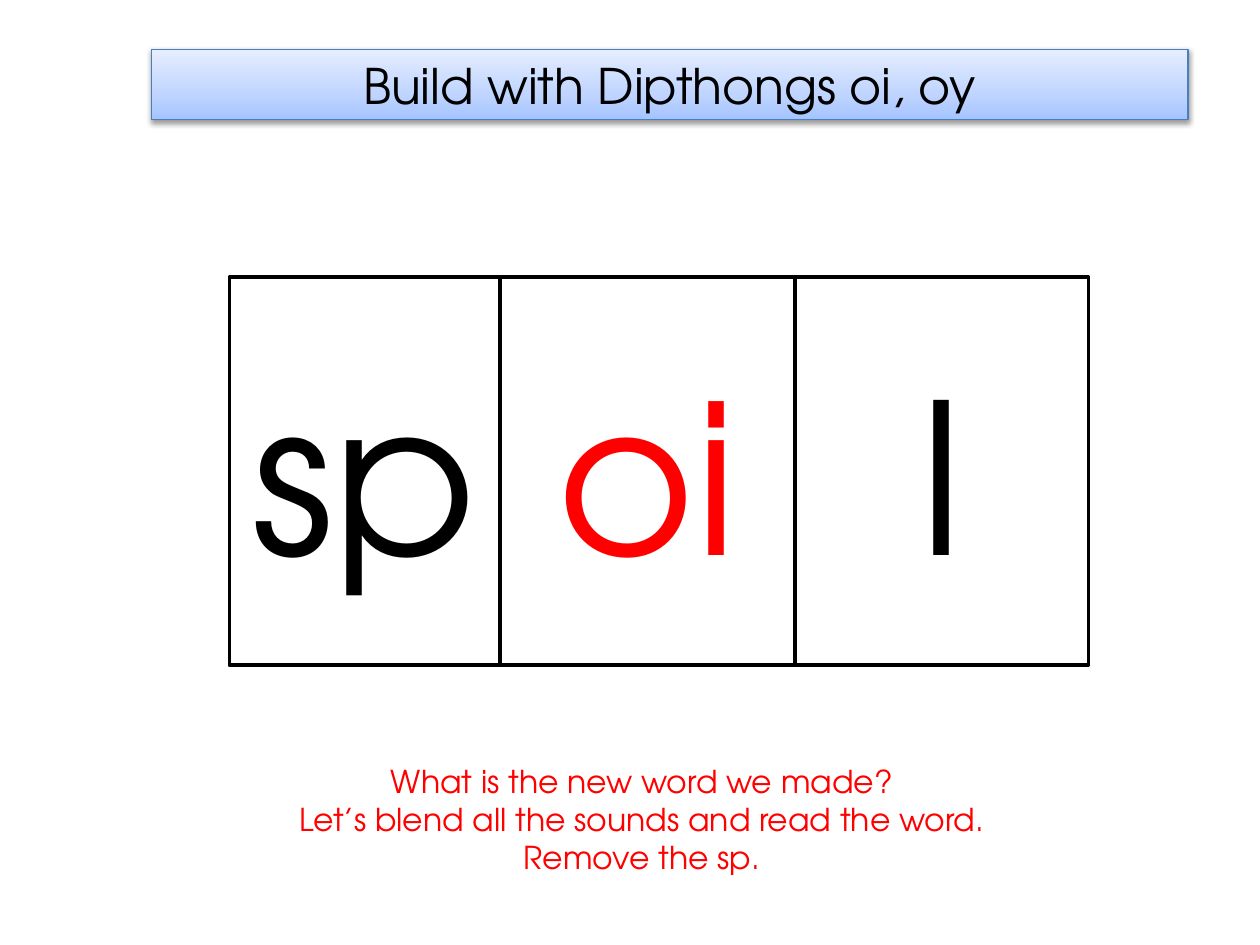
import copy

import lxml.etree
import pptx
import pptx.dml.color
import pptx.enum.shapes
import pptx.enum.text
import pptx.oxml
import pptx.oxml.ns
import pptx.util

Inches = pptx.util.Inches
Pt = pptx.util.Pt
RGBColor = pptx.dml.color.RGBColor
qn = pptx.oxml.ns.qn

FONT = "TeX Gyre Adventor"
BLACK = RGBColor(0x00, 0x00, 0x00)
WHITE = RGBColor(0xFF, 0xFF, 0xFF)
RED = RGBColor(0xFF, 0x00, 0x00)
BORDER_BLUE = RGBColor(0x4B, 0x7E, 0xBC)
BANNER_STOPS = [
    (0, RGBColor(0xA4, 0xC4, 0xFF)),
    (0.35, RGBColor(0xBF, 0xD4, 0xFF)),
    (1, RGBColor(0xE6, 0xEE, 0xFF)),
]

CARD_LEFT, CARD_TOP, CARD_HEIGHT = 1.82, 2.2, 3.08
CARDS = [("sp", 2.15, BLACK), ("oi", 2.34, RED), ("l", 2.33, BLACK)]
PROMPTS = [
    "What is the new word we made?",
    "Let’s blend all the sounds and read the word.",
    "Remove the sp.",
]


def write_lines(tf, lines, size, color):
    tf.word_wrap = True
    for i, line in enumerate(lines):
        p = tf.paragraphs[0] if i == 0 else tf.add_paragraph()
        p.text = line
        p.alignment = pptx.enum.text.PP_ALIGN.CENTER
        p.font.name = FONT
        p.font.size = Pt(size)
        p.font.color.rgb = color


def fill_gradient(sp, stops, angle):
    """Fill with any number of (position, colour) stops."""
    sp.fill.gradient()
    sp.fill.gradient_angle = angle
    gs_list = sp._element.spPr.find(qn("a:gradFill")).find(qn("a:gsLst"))
    while len(gs_list) < len(stops):
        gs_list.append(copy.deepcopy(gs_list[0]))
    for stop, (position, color) in zip(sp.fill.gradient_stops, stops):
        stop.position = position
        stop.color.rgb = color


def add_drop_shadow(sp, blur, distance, opacity):
    """Cast a black shadow straight down; opacity is in percent."""
    sp.shadow.inherit = False
    effects = sp._element.spPr.find(qn("a:effectLst"))
    shadow = lxml.etree.SubElement(
        effects, qn("a:outerShdw"), blurRad=str(Pt(blur)),
        dist=str(Pt(distance)), dir="5400000", rotWithShape="0")
    color = lxml.etree.SubElement(shadow, qn("a:srgbClr"), val=str(BLACK))
    lxml.etree.SubElement(color, qn("a:alpha"), val=str(opacity * 1000))


def format_title(sp, text):
    sp.left, sp.top = Inches(1.2), Inches(0.39)
    sp.width, sp.height = Inches(8.23), Inches(0.56)
    fill_gradient(sp, BANNER_STOPS, 90)
    sp.line.color.rgb = BORDER_BLUE
    sp.line.width = Pt(0.75)
    add_drop_shadow(sp, 3.1, 1.6, 38)
    tf = sp.text_frame
    tf.auto_size = pptx.enum.text.MSO_AUTO_SIZE.NONE
    tf.vertical_anchor = pptx.enum.text.MSO_ANCHOR.MIDDLE
    write_lines(tf, [text], 28, BLACK)


def add_letter_card(s, left, width, letters, color):
    sp = s.shapes.add_shape(
        pptx.enum.shapes.MSO_SHAPE.RECTANGLE,
        Inches(left), Inches(CARD_TOP), Inches(width), Inches(CARD_HEIGHT))
    sp.shadow.inherit = False
    sp.fill.solid()
    sp.fill.fore_color.rgb = WHITE
    sp.line.color.rgb = BLACK
    sp.line.width = Pt(2)
    sp.text_frame.vertical_anchor = pptx.enum.text.MSO_ANCHOR.MIDDLE
    write_lines(sp.text_frame, [letters], 120, color)


def add_prompts(s):
    box = s.shapes.add_textbox(Inches(1.61), Inches(6), Inches(6.97), Inches(1.01))
    box.text_frame.auto_size = pptx.enum.text.MSO_AUTO_SIZE.SHAPE_TO_FIT_TEXT
    write_lines(box.text_frame, PROMPTS, 18, RED)


def main():
    prs = pptx.Presentation()
    prs.slide_width, prs.slide_height = Inches(10), Inches(7.5)
    s = prs.slides.add_slide(prs.slide_layouts.get_by_name("Title Only"))
    format_title(s.shapes.title, "Build with Dipthongs oi, oy")
    left = CARD_LEFT
    for letters, width, color in CARDS:
        add_letter_card(s, left, width, letters, color)
        left += width
    add_prompts(s)
    prs.save("out.pptx")


if __name__ == "__main__":
    main()
